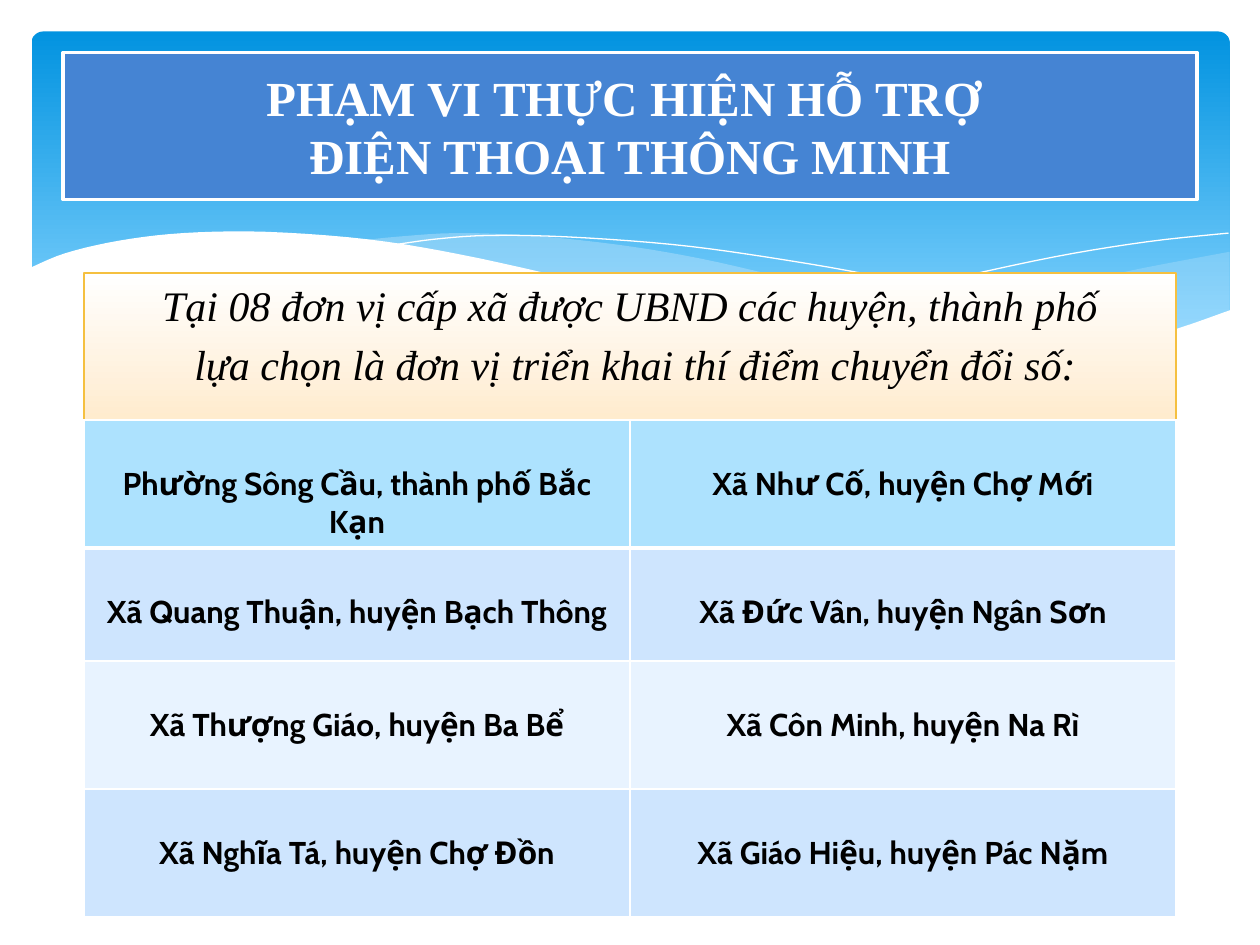
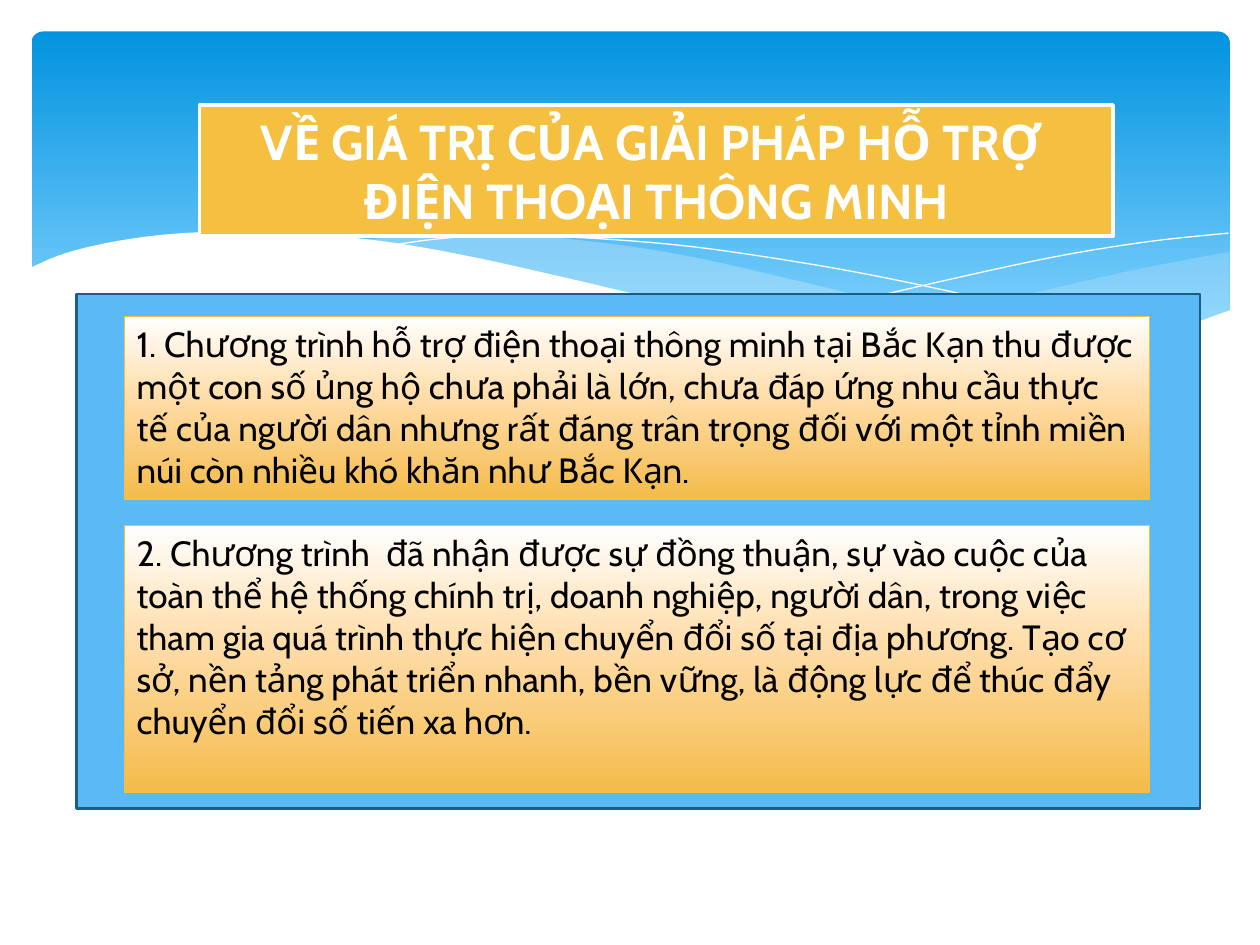
from typing import NamedTuple

from lxml.etree import SubElement
from pptx import Presentation
from pptx.dml.color import RGBColor
from pptx.enum.shapes import MSO_SHAPE as Preset
from pptx.enum.text import MSO_ANCHOR as Anchor, MSO_AUTO_SIZE as AutoSize, PP_ALIGN as Align
from pptx.oxml.ns import qn
from pptx.util import Pt

SERIF, SANS = "Times New Roman", "Cabin"
BLACK, WHITE, AMBER, MIST = "000000", "FFFFFF", "F5C040", "C6E7FC"
SKY_STOPS = [(0, "0293E0"), (90, "83D3FE")]
SAND_STOPS = [(0, "FFFFFF"), (44, "FFDDAA"), (100, "F4BB4A")]
HEADER_FILL, ROW_FILLS = "ADE2FE", ["CEE5FE", "E8F3FF"]

FAR_WAVE_TOP = [(702, 144), (652.3, 153.4), (619.9, 160.6), (560.9, 174.2), (508.3, 185),
                (475.9, 190.8)]
FAR_WAVE_BOTTOM = [(475.9, 190.8), (536.4, 198), (578.2, 199.7), (614.9, 199.1),
                   (651.6, 193.7), (683.3, 185), (702.7, 177.8)]
NEAR_WAVE_TOP = [(643, 196.6), (602.6, 190.8), (558, 182.9), (508.3, 172.8), (452.9, 159.8),
                 (399.6, 147.6), (352.1, 139.7), (302.4, 134.6), (259.9, 133.2),
                 (225.4, 135.4), (205.9, 137.5)]
NEAR_WAVE_BOTTOM = [(205.9, 137.5), (260.6, 146.2), (323.3, 159.8), (381.6, 172.8),
                    (445, 185.8), (500.4, 194.4), (556.6, 199.4), (610.6, 199.4),
                    (643, 196.6)]
FALLING_ARC = [(222.5, 140.4), (247.7, 136.8), (278.6, 134.6), (324, 135.4), (383.8, 139.7),
               (437.8, 146.9), (500.4, 157.7), (572.4, 173.5), (653, 195.8)]
RISING_ARC = [(441.4, 185), (483.8, 173.5), (538.6, 160.6), (601.9, 146.9), (655.2, 138.2),
              (702, 133.2)]
HILL_TOP = [(703.4, 177.1), (662.4, 190.8), (621.4, 197.3), (571, 198.7), (509.8, 194.4),
            (450.7, 185.8), (380.9, 172.1), (321.8, 158.4), (262.8, 145.4), (210.2, 136.8),
            (151.9, 132.5), (105.1, 133.2), (68.4, 137.5), (37.4, 144.7), (16.6, 153.4)]
HILL_BASE = [(16.6, 236.9), (703.4, 236.9)]

COMMUNES = [
    ("Phường Sông Cầu, thành phố Bắc Kạn", "Xã Như Cố, huyện Chợ Mới"),
    ("Xã Quang Thuận, huyện Bạch Thông", "Xã Đức Vân, huyện Ngân Sơn"),
    ("Xã Thượng Giáo, huyện Ba Bể", "Xã Côn Minh, huyện Na Rì"),
    ("Xã Nghĩa Tá, huyện Chợ Đồn", "Xã Giáo Hiệu, huyện Pác Nặm"),
]
FINDINGS = [
    "1. Chương trình hỗ trợ điện thoại thông minh tại Bắc Kạn thu được một con số ủng hộ chưa "
    "phải là lớn, chưa đáp ứng nhu cầu thực tế của người dân nhưng rất đáng trân trọng đối với "
    "một tỉnh miền núi còn nhiều khó khăn như Bắc Kạn.",
    "2. Chương trình  đã nhận được sự đồng thuận, sự vào cuộc của toàn thể hệ thống chính trị, "
    "doanh nghiệp, người dân, trong việc tham gia quá trình thực hiện chuyển đổi số tại địa "
    "phương. Tạo cơ sở, nền tảng phát triển nhanh, bền vững, là động lực để thúc đẩy chuyển đổi "
    "số tiến xa hơn.",
]


class Box(NamedTuple):
    """A rectangle in points."""
    left: float
    top: float
    width: float
    height: float

    def lengths(self):
        """Return the four sides as lengths."""
        return [Pt(side) for side in self]


def rgb(code):
    """Turn a hex string into a colour."""
    return RGBColor.from_string(code)


def paint(shape, fill=None, line=None, width=0, alpha=None):
    """Give a shape a plain fill (a hex) or a gradient (a list of stops), and a line."""
    shape.shadow.inherit = False
    if fill is None:
        shape.fill.background()
    elif isinstance(fill, str):
        shape.fill.solid()
        shape.fill.fore_color.rgb = rgb(fill)
    else:
        shape.fill.gradient()
        shape.fill.gradient_angle = 270
        stops = shape.element.spPr.find(qn("a:gradFill")).find(qn("a:gsLst"))
        stops[:] = []
        for percent, code in fill:
            stop = SubElement(stops, qn("a:gs"), pos=str(percent * 1000))
            SubElement(stop, qn("a:srgbClr"), val=code)
    if alpha:
        color = shape.element.spPr.find(qn("a:solidFill"))[0]
        SubElement(color, qn("a:alpha"), val=str(alpha * 1000))
    if line:
        shape.line.color.rgb = rgb(line)
        shape.line.width = Pt(width)
    else:
        shape.line.fill.background()


def write(frame, lines, font, size, color=BLACK, bold=False, italic=False,
          align=Align.CENTER, anchor=Anchor.TOP):
    """Fill a text frame with one paragraph per line."""
    frame.word_wrap = True
    frame.auto_size = AutoSize.NONE
    frame.vertical_anchor = anchor
    for index, line in enumerate(lines):
        paragraph = frame.add_paragraph() if index else frame.paragraphs[0]
        paragraph.text = line
        paragraph.alignment = align
        style = paragraph.font
        style.name, style.size, style.bold, style.italic = font, Pt(size), bold, italic
        style.color.rgb = rgb(color)


def place(shape, box):
    """Move a placeholder to a box."""
    shape.left, shape.top, shape.width, shape.height = box.lengths()


def smooth(knots, steps=5):
    """Run a Catmull-Rom curve through the knots."""
    padded = [knots[0], *knots, knots[-1]]
    curve = [knots[0]]
    for a, b, c, d in zip(padded, padded[1:], padded[2:], padded[3:]):
        for t in (step / steps for step in range(1, steps + 1)):
            curve.append(tuple(
                (2 * q + (r - p) * t + (2 * p - 5 * q + 4 * r - s) * t ** 2
                 + (3 * q - p - 3 * r + s) * t ** 3) / 2
                for p, q, r, s in zip(a, b, c, d)))
    return curve


def draw_outline(slide, box, points, closed):
    """Draw a freeform whose points are measured from the box's corner."""
    start, *rest = [(Pt(box.left + x), Pt(box.top + y)) for x, y in points]
    builder = slide.shapes.build_freeform(*start)
    builder.add_line_segments(rest, close=closed)
    return builder.convert_to_shape()


def build_backdrop(slide, master, box):
    """Draw the sky and waves, then hand them to the master for every slide."""
    sky_box = Box(box.left + 18, box.top + 18, box.width - 35.3, 194.4)
    sky = slide.shapes.add_shape(Preset.ROUNDED_RECTANGLE, *sky_box.lengths())
    sky.adjustments[0] = 0.034
    paint(sky, SKY_STOPS)
    parts = [sky]
    for points, style in [
        (smooth(FAR_WAVE_TOP) + smooth(FAR_WAVE_BOTTOM) + [(702.7, 144)],
         {"fill": MIST, "alpha": 29}),
        (smooth(NEAR_WAVE_TOP) + smooth(NEAR_WAVE_BOTTOM), {"fill": MIST, "alpha": 40}),
        (smooth(FALLING_ARC), {"line": WHITE}),
        (smooth(RISING_ARC), {"line": WHITE}),
        (smooth(HILL_TOP) + HILL_BASE, {"fill": WHITE}),
    ]:
        wave = draw_outline(slide, box, points, closed="fill" in style)
        paint(wave, **style)
        parts.append(wave)
    for part in parts:
        master.shapes.element.append(part.element)


def build_title(slide, box, lines, font, fill):
    """Set the title in a filled band with a white frame."""
    title = slide.shapes.title
    place(title, box)
    paint(title, fill, WHITE, 2)
    write(title.text_frame, lines, font, 28, WHITE, bold=True, anchor=Anchor.MIDDLE)


def build_intro(slide, box, lines):
    """Set the body placeholder as a sand panel without bullets."""
    intro = slide.placeholders[1]
    place(intro, box)
    paint(intro, SAND_STOPS, AMBER, 0.75)
    write(intro.text_frame, lines, SERIF, 24, italic=True)
    for paragraph in intro.text_frame.paragraphs:
        properties = paragraph._p.get_or_add_pPr()
        properties.set("marL", "0")
        properties.set("indent", "0")
        properties.insert_element_before(
            properties.makeelement(qn("a:buNone")), "a:tabLst", "a:defRPr", "a:extLst")


def set_borders(cell, bottom):
    """Give a cell white borders, with its own width at the bottom."""
    properties = cell._tc.get_or_add_tcPr()
    for index, (side, width) in enumerate([("L", 1), ("R", 1), ("T", 1), ("B", bottom)]):
        border = properties.makeelement(qn(f"a:ln{side}"), w=str(Pt(width)))
        SubElement(SubElement(border, qn("a:solidFill")), qn("a:srgbClr"), val=WHITE)
        properties.insert(index, border)


def build_communes(slide, box, rows):
    """Lay out the table of communes, one shade per row."""
    table = slide.shapes.add_table(len(rows), len(rows[0]), *box.lengths()).table
    heights = [73.2, 64.5, 73.2, 73.2]
    for index, (names, height) in enumerate(zip(rows, heights)):
        table.rows[index].height = Pt(height)
        for cell, name in zip(table.rows[index].cells, names):
            cell.fill.solid()
            cell.fill.fore_color.rgb = rgb(ROW_FILLS[(index - 1) % 2] if index else HEADER_FILL)
            cell.margin_top = Pt(25.5)
            write(cell.text_frame, [name], SANS, 18, bold=True)
            set_borders(cell, bottom=1 if index else 3)


def build_findings(slide, box, findings):
    """Stack the findings as sand notes on a blue panel."""
    panel = slide.shapes.add_shape(Preset.RECTANGLE, *box.lengths())
    paint(panel, "5BBAF6", "195F84", 1.25)
    top = box.top + 12.8
    for finding, height in zip(findings, [104.4, 152.8]):
        note_box = Box(box.left + 27.3, top, box.width - 56, height)
        note = slide.shapes.add_shape(Preset.RECTANGLE, *note_box.lengths())
        paint(note, SAND_STOPS, AMBER, 0.75)
        write(note.text_frame, [finding], SANS, 20, align=Align.LEFT)
        top += height + 15.1


def main():
    """Build both slides and save them."""
    deck = Presentation()
    deck.slide_width, deck.slide_height = Pt(720), Pt(540)

    scope = deck.slides.add_slide(deck.slide_layouts[1])
    build_backdrop(scope, deck.slide_master, Box(0, 0, 720, 540))
    build_title(scope, Box(36, 30, 648, 84),
                ["PHẠM VI THỰC HIỆN HỖ TRỢ \vĐIỆN THOẠI THÔNG MINH"], SERIF, "4584D3")
    build_intro(scope, Box(48, 156, 624, 326),
                ["Tại 08 đơn vị cấp xã được UBND các huyện, thành phố",
                 " lựa chọn là đơn vị triển khai thí điểm chuyển đổi số:"])
    build_communes(scope, Box(48, 240, 624, 284), COMMUNES)

    value = deck.slides.add_slide(deck.slide_layouts[5])
    build_title(value, Box(114, 60, 522, 75),
                ["VỀ GIÁ TRỊ CỦA GIẢI PHÁP HỖ TRỢ ", "ĐIỆN THOẠI THÔNG MINH"], SANS, AMBER)
    build_findings(value, Box(43.7, 168, 642, 294), FINDINGS)

    deck.save("out.pptx")


if __name__ == "__main__":
    main()
